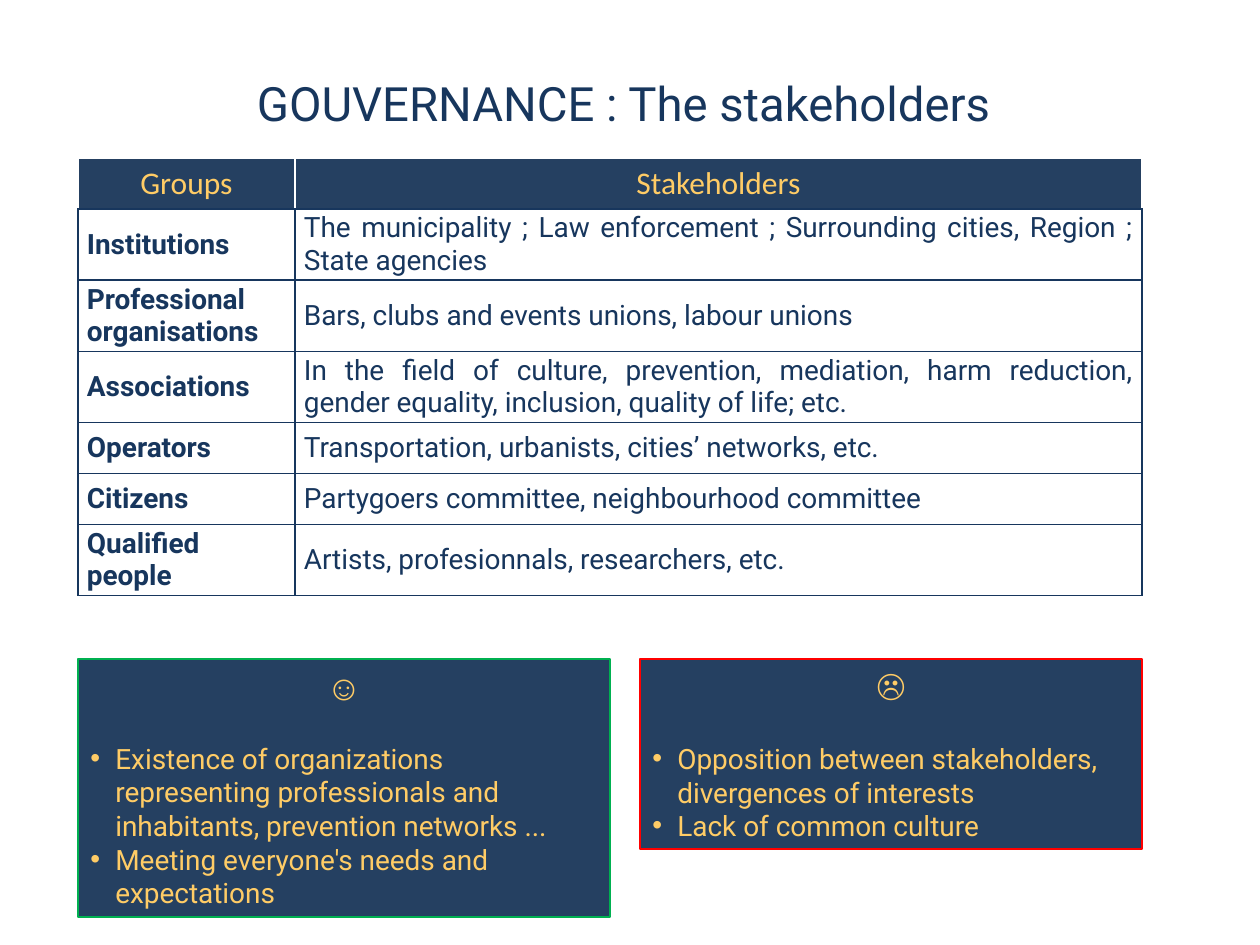
from lxml.etree import SubElement
from pptx import Presentation
from pptx.dml.color import RGBColor
from pptx.enum.shapes import MSO_SHAPE as Shape
from pptx.enum.text import MSO_ANCHOR as Anchor, PP_ALIGN as Align
from pptx.oxml.ns import qn
from pptx.util import Emu, Pt

# Content
TITLE = "GOUVERNANCE : The stakeholders"
HEADER = ("Groups", "Stakeholders")
ROWS = [
    ("Institutions", "The municipality ; Law enforcement ; Surrounding cities, Region ; State agencies"),
    ("Professional organisations", "Bars, clubs and events unions, labour unions"),
    ("Associations", "In the field of culture, prevention, mediation, harm reduction, "
                     "gender equality, inclusion, quality of life; etc."),
    ("Operators", "Transportation, urbanists, cities’ networks, etc."),
    ("Citizens", "Partygoers committee, neighbourhood committee"),
    ("Qualified people", "Artists, profesionnals, researchers, etc."),
]
# Icon, icon size, space after it, outline colour, left, width, height, points
PANELS = [
    ("☺", 20, 19.5, "green", 78, 532, 258,
     ["Existence of organizations representing professionals and inhabitants, prevention networks ...",
      "Meeting everyone's needs and expectations"]),
    ("☹", 18, 22, "red", 640, 502, 190,
     ["Opposition between stakeholders, divergences of interests",
      "Lack of common culture"]),
]
COLORS = {"navy": "254061", "ink": "17365D", "gold": "FFCC66",
          "green": "00B050", "red": "FF0000", "white": "FFFFFF"}

# Layout in px, 126 to the inch
TITLE_BOX = (88, 29, 1071, 147)
TABLE_LEFT, TABLE_TOP = 78, 158
COLUMNS = (217, 847)
ROW_HEIGHT = 51
PANEL_TOP = 659
INDENT = 25


def px(value):
    return Emu(round(value * 914400 / 126))


def color(name):
    return RGBColor.from_string(COLORS[name])


def add_span(para, text, size, font, ink, bold=False):
    span = para.add_run()
    span.text = text
    span.font.size = Pt(size)
    span.font.name = font
    span.font.bold = bold
    span.font.color.rgb = color(ink)


def add_bullet(para):
    props = para._p.get_or_add_pPr()
    props.set("marL", str(px(INDENT)))
    props.set("indent", str(-px(INDENT)))
    SubElement(props, qn("a:buFont"), typeface="Arial")
    SubElement(props, qn("a:buChar"), char="•")


def set_borders(cell, left, right, top, bottom):
    props = cell._tc.get_or_add_tcPr()
    sides = (("a:lnL", left), ("a:lnR", right), ("a:lnT", top), ("a:lnB", bottom))
    for place, (tag, name) in enumerate(sides):
        line = SubElement(props, qn(tag), w=str(Pt(1)))
        fill = SubElement(line, qn("a:solidFill"))
        SubElement(fill, qn("a:srgbClr"), val=COLORS[name])
        props.insert(place, line)


def add_title(page):
    title = page.shapes.title
    title.left, title.top, title.width, title.height = map(px, TITLE_BOX)
    title.text_frame.vertical_anchor = Anchor.MIDDLE
    para = title.text_frame.paragraphs[0]
    para.alignment = Align.CENTER
    add_span(para, TITLE, 27, "Roboto", "ink")


def fill_header(cell, text):
    cell.fill.solid()
    cell.fill.fore_color.rgb = color("navy")
    para = cell.text_frame.paragraphs[0]
    para.alignment = Align.CENTER
    add_span(para, text, 18, "Calibri", "gold")
    set_borders(cell, "white", "white", "white", "ink")


def fill_body(cell, text, is_group):
    cell.fill.background()
    cell.vertical_anchor = Anchor.MIDDLE
    cell.margin_left = cell.margin_right = px(9)
    cell.margin_top = cell.margin_bottom = px(3)
    para = cell.text_frame.paragraphs[0]
    para.alignment = Align.LEFT if is_group else Align.JUSTIFY
    add_span(para, text, 16, "Roboto", "ink", is_group)
    set_borders(cell, "ink", "ink", "ink", "ink")


def add_stakeholders(page):
    count = len(ROWS) + 1
    table = page.shapes.add_table(count, len(COLUMNS), px(TABLE_LEFT), px(TABLE_TOP),
                                  px(sum(COLUMNS)), px(count * ROW_HEIGHT)).table
    table.horz_banding = False
    for column, width in zip(table.columns, COLUMNS):
        column.width = px(width)
    for row in table.rows:
        row.height = px(ROW_HEIGHT)
    for col, text in enumerate(HEADER):
        fill_header(table.cell(0, col), text)
    for row, texts in enumerate(ROWS, 1):
        for col, text in enumerate(texts):
            fill_body(table.cell(row, col), text, col == 0)


def add_panel(page, icon, icon_size, gap, outline, left, width, height, points):
    box = page.shapes.add_shape(Shape.RECTANGLE, px(left), px(PANEL_TOP), px(width), px(height))
    box.shadow.inherit = False
    box.fill.solid()
    box.fill.fore_color.rgb = color("navy")
    box.line.color.rgb = color(outline)
    box.line.width = Pt(0.75)
    frame = box.text_frame
    frame.word_wrap = True
    frame.vertical_anchor = Anchor.TOP
    para = frame.paragraphs[0]
    para.alignment = Align.CENTER
    para.space_after = Pt(gap)
    add_span(para, icon, icon_size, "Arial", "gold")
    for point in points:
        para = frame.add_paragraph()
        para.alignment = Align.LEFT
        add_bullet(para)
        add_span(para, point, 16, "Roboto", "gold")


def main():
    deck = Presentation()
    deck.slide_width, deck.slide_height = px(1260), px(945)
    page = deck.slides.add_slide(deck.slide_layouts[5])
    add_title(page)
    for panel in PANELS:
        add_panel(page, *panel)
    add_stakeholders(page)
    deck.save("out.pptx")


if __name__ == "__main__":
    main()
